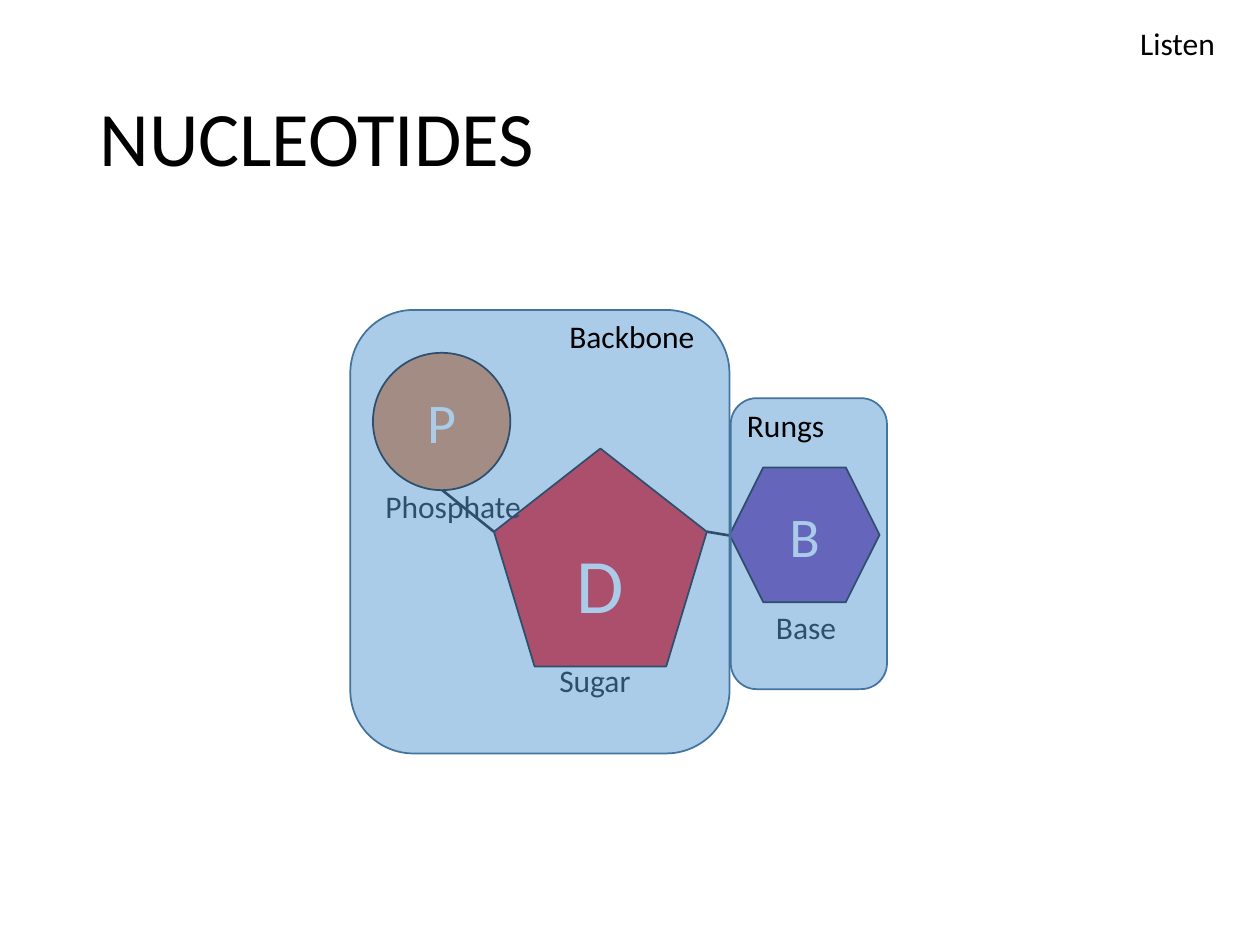
from dataclasses import dataclass

from lxml import etree
from pptx import Presentation, util as u
from pptx.dml.color import RGBColor
from pptx.enum import shapes, text
from pptx.oxml.ns import qn

COLS, ROWS = 100, 75
FONT = "Calibri"
HEX = {
    "ink": "000000",
    "paper": "FFFFFF",
    "sugar": "FF0000",
    "base": "7030A0",
    "acid": "ED7D31",
    "panel": "5B9BD5",
    "edge": "43739E",
}
KIND = shapes.MSO_SHAPE

prs = Presentation()
prs.slide_width, prs.slide_height = u.Inches(10), u.Inches(7.5)
slide = prs.slides.add_slide(prs.slide_layouts[5])


@dataclass
class Box:
    """A place on the grid, in columns and rows."""
    col: float
    row: float
    wide: float
    high: float

    def place(self) -> tuple:
        return (across(self.col), down(self.row),
                across(self.wide), down(self.high))


@dataclass
class Label:
    words: str
    box: Box


@dataclass
class Part:
    """A filled shape with a letter in it (or none) and a label."""
    kind: int
    box: Box
    fill: str
    label: Label
    letter: str = ""
    size: int = 32
    edge: str = "ink"
    alpha: int = 100


def across(cols: float) -> int:
    return int(prs.slide_width * cols / COLS)


def down(rows: float) -> int:
    return int(prs.slide_height * rows / ROWS)


def color(name: str) -> RGBColor:
    return RGBColor.from_string(HEX[name])


def write(frame, words: str, size: int, ink: str = "ink",
          align=text.PP_ALIGN.LEFT):
    """Put one formatted paragraph in a text frame."""
    frame.word_wrap = True
    para = frame.paragraphs[0]
    para.text = words
    para.alignment = align
    para.font.name = FONT
    para.font.size = u.Pt(size)
    para.font.color.rgb = color(ink)
    return para


def draw_label(label: Label) -> None:
    area = slide.shapes.add_textbox(*label.box.place())
    area.text_frame.auto_size = text.MSO_AUTO_SIZE.SHAPE_TO_FIT_TEXT
    write(area.text_frame, label.words, 18)


def draw_bond(start: tuple, end: tuple) -> None:
    bond = slide.shapes.add_connector(
        shapes.MSO_CONNECTOR.STRAIGHT,
        across(start[0]), down(start[1]), across(end[0]), down(end[1]))
    bond.line.color.rgb = color("ink")
    bond.line.width = u.Pt(1.5)
    etree.SubElement(bond._element.spPr, qn("a:effectLst"))


def draw_part(part: Part) -> None:
    shape = slide.shapes.add_shape(part.kind, *part.box.place())
    shape.shadow.inherit = False
    shape.fill.solid()
    shape.fill.fore_color.rgb = color(part.fill)
    shape.line.color.rgb = color(part.edge)
    shape.line.width = u.Pt(1)
    if part.alpha < 100:
        tint = shape._element.spPr.find(qn("a:solidFill"))[0]
        etree.SubElement(tint, qn("a:alpha"), val=str(part.alpha * 1000))
    if part.letter:
        shape.text_frame.vertical_anchor = text.MSO_ANCHOR.MIDDLE
        write(shape.text_frame, part.letter, part.size, "paper",
              text.PP_ALIGN.CENTER)
    draw_label(part.label)


# Title
title = slide.shapes.title
title.left, title.top, title.width, title.height = Box(6.9, 4, 86.2, 14.5).place()
title.text_frame.vertical_anchor = text.MSO_ANCHOR.MIDDLE
write(title.text_frame, "NUCLEOTIDES", 44).line_spacing = 0.9

# Bonds: phosphate to sugar, sugar to base
draw_bond((35.1, 38.9), (39.2, 42.2))
draw_bond((56.1, 42.2), (57.9, 42.5))

draw_label(Label("Listen", Box(89.5, 1.4, 9.5, 4)))

# Molecules first, then the see-through panels over them
PARTS = [
    Part(KIND.REGULAR_PENTAGON, Box(39.2, 35.6, 16.9, 17.3), "sugar",
         Label("Sugar", Box(43.4, 52, 16.8, 4)), "D", 44),
    Part(KIND.HEXAGON, Box(57.9, 37.1, 11.9, 10.7), "base",
         Label("Base", Box(60.6, 47.8, 7.1, 4)), "B"),
    Part(KIND.OVAL, Box(29.6, 28, 10.9, 10.9), "acid",
         Label("Phosphate", Box(29.6, 38.2, 16.8, 4)), "P"),
    Part(KIND.ROUNDED_RECTANGLE, Box(27.8, 24.6, 30.1, 35.2), "panel",
         Label("Backbone", Box(44.2, 24.7, 12.6, 4)), edge="edge", alpha=51),
    Part(KIND.ROUNDED_RECTANGLE, Box(58, 31.6, 12.4, 23.1), "panel",
         Label("Rungs", Box(58.3, 31.7, 12.6, 4)), edge="edge", alpha=51),
]
for part in PARTS:
    draw_part(part)

prs.save("out.pptx")
